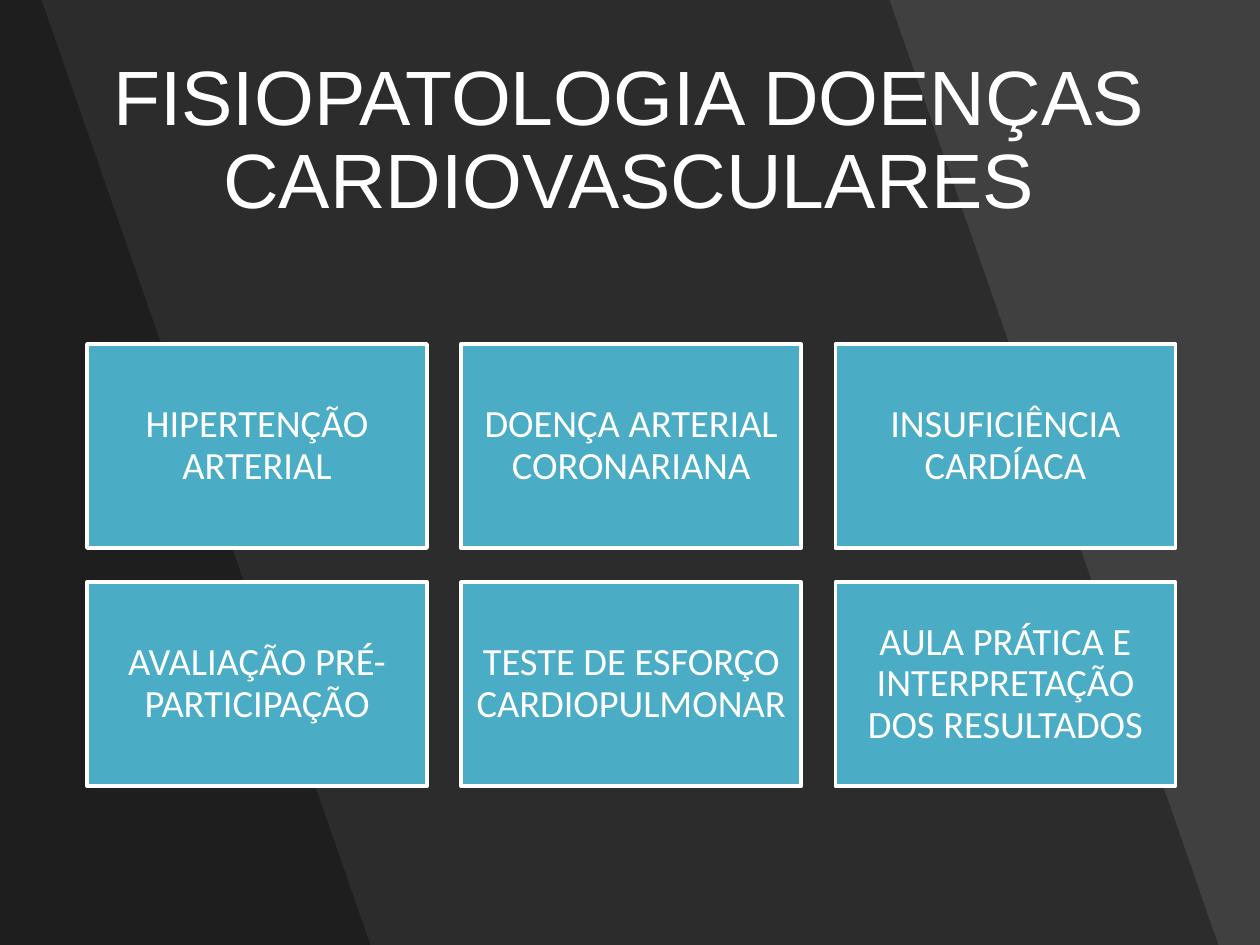
from dataclasses import dataclass

from lxml import etree
from pptx import Presentation
from pptx.dml.color import RGBColor
from pptx.enum.shapes import MSO_SHAPE
from pptx.enum.text import MSO_ANCHOR, MSO_AUTO_SIZE, PP_ALIGN
from pptx.oxml.ns import qn
from pptx.shapes.autoshape import Shape
from pptx.slide import Slide
from pptx.text.text import TextFrame
from pptx.util import Inches, Pt

RECT = MSO_SHAPE.RECTANGLE
MIDDLE = MSO_ANCHOR.MIDDLE
CENTER = PP_ALIGN.CENTER
NO_FIT = MSO_AUTO_SIZE.NONE

WHITE = RGBColor(0xFF, 0xFF, 0xFF)
BLACK = RGBColor(0x00, 0x00, 0x00)
GREY = RGBColor(0x40, 0x40, 0x40)
TEAL = RGBColor(0x4B, 0xAC, 0xC6)

WIDTH, HEIGHT = Inches(10), Inches(7.5)
LEFT, TOP = Inches(0.69), Inches(2.73)
CARD_W, CARD_H = Inches(2.7), Inches(1.62)
GAP = Inches(0.27)
INSET = Inches(0.09)


@dataclass(frozen=True)
class Band:
    top: float
    base: float


@dataclass(frozen=True)
class Card:
    col: int
    row: int
    text: str


BANDS = [Band(0.706, 0.967), Band(0.033, 0.294)]
CARDS = [
    Card(0, 0, "HIPERTENÇÃO ARTERIAL"),
    Card(1, 0, "DOENÇA ARTERIAL CORONARIANA"),
    Card(2, 0, "INSUFICIÊNCIA CARDÍACA"),
    Card(0, 1, "AVALIAÇÃO PRÉ-PARTICIPAÇÃO"),
    Card(1, 1, "TESTE DE ESFORÇO CARDIOPULMONAR"),
    Card(2, 1, "AULA PRÁTICA E INTERPRETAÇÃO DOS RESULTADOS"),
]


def write(frame: TextFrame, text: str, font: str, size: int) -> None:
    frame.word_wrap = True
    frame.auto_size = NO_FIT
    frame.vertical_anchor = MIDDLE
    para = frame.paragraphs[0]
    para.alignment = CENTER
    para.line_spacing = 0.9
    run = para.add_run()
    run.text = text
    run.font.name = font
    run.font.size = Pt(size)
    run.font.color.rgb = WHITE


def paint(shape: Shape, color: RGBColor) -> None:
    shape.shadow.inherit = False
    shape.fill.solid()
    shape.fill.fore_color.rgb = color


def draw_band(slide: Slide, band: Band) -> None:
    pen = slide.shapes.build_freeform(0, 0)
    pen.add_line_segments(
        [(int(WIDTH * band.top), 0), (int(WIDTH * band.base), HEIGHT), (0, HEIGHT)],
        close=True,
    )
    shape = pen.convert_to_shape()
    paint(shape, BLACK)
    shape.line.fill.background()
    tone = shape.element.spPr.find(qn("a:solidFill"))[0]
    etree.SubElement(tone, qn("a:alpha"), val="30000")


def draw_title(slide: Slide, text: str) -> None:
    title = slide.shapes.title
    title.left, title.top = Inches(0.68), Inches(0.4)
    title.width, title.height = Inches(8.63), Inches(1.45)
    write(title.text_frame, text, "Arial", 44)
    title.element.getparent().append(title.element)


def draw_card(slide: Slide, card: Card) -> None:
    left = LEFT + card.col * (CARD_W + GAP)
    top = TOP + card.row * (CARD_H + GAP)
    shape = slide.shapes.add_shape(RECT, left, top, CARD_W, CARD_H)
    paint(shape, TEAL)
    shape.line.color.rgb = WHITE
    shape.line.width = Pt(2)
    frame = shape.text_frame
    frame.margin_left = frame.margin_right = INSET
    frame.margin_top = frame.margin_bottom = INSET
    write(frame, card.text, "Calibri", 22)


def main() -> None:
    deck = Presentation()
    deck.slide_width, deck.slide_height = WIDTH, HEIGHT
    slide = deck.slides.add_slide(deck.slide_layouts[5])
    slide.background.fill.solid()
    slide.background.fill.fore_color.rgb = GREY
    for band in BANDS:
        draw_band(slide, band)
    draw_title(slide, "FISIOPATOLOGIA DOENÇAS CARDIOVASCULARES")
    for card in CARDS:
        draw_card(slide, card)
    deck.save("out.pptx")


if __name__ == "__main__":
    main()
